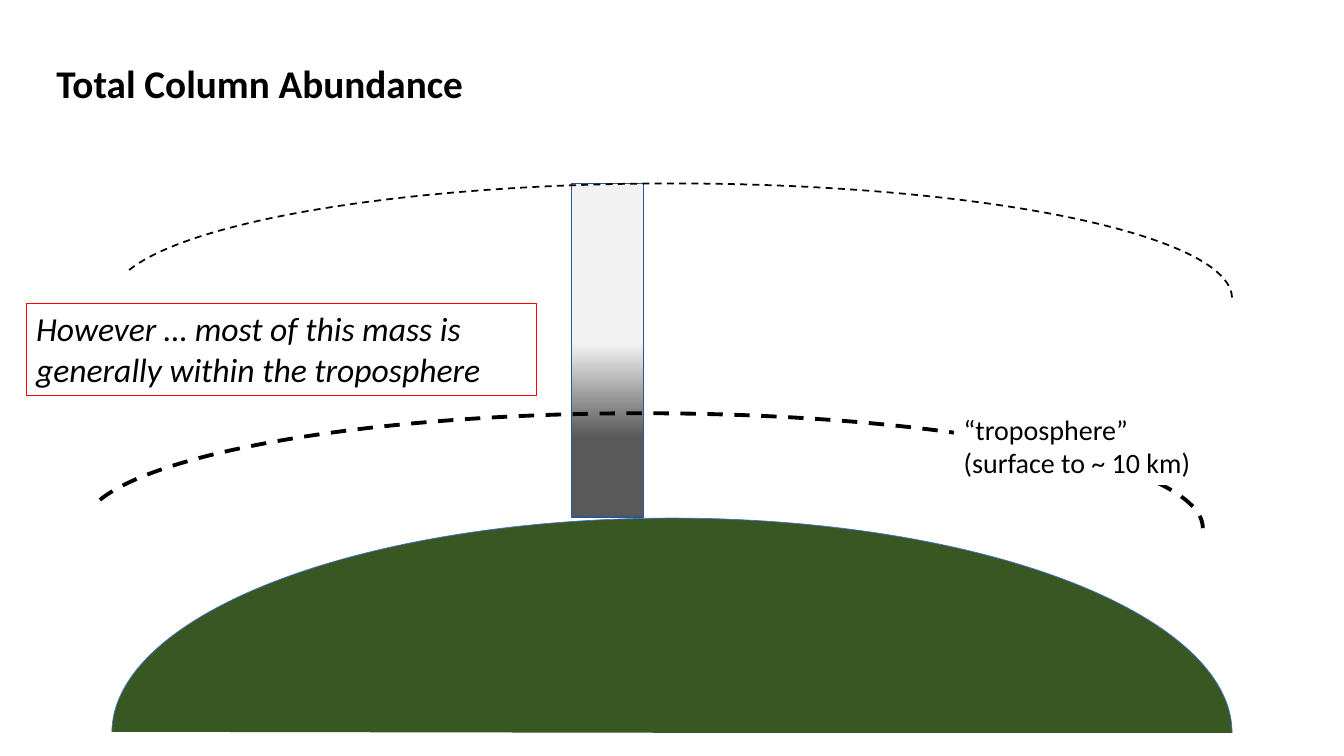
from dataclasses import dataclass

from pptx import Presentation
from pptx.dml.color import RGBColor
from pptx.enum.dml import MSO_LINE
from pptx.enum.shapes import MSO_SHAPE as Preset
from pptx.enum.text import MSO_ANCHOR, MSO_AUTO_SIZE, PP_ALIGN
from pptx.shapes.autoshape import Shape
from pptx.slide import Slide
from pptx.util import Emu, Pt

PX = 9144  # 100 px to the inch
COLORS = {
    "text": "000000", "ground": "385723", "ground_line": "4472C4",
    "column_line": "325491", "dense": "595959", "thin": "F2F2F2",
    "label": "FFFFFF", "callout": "FF0000", "boundary": "000000",
}


@dataclass(frozen=True)
class Box:
    left: int
    top: int
    width: int
    height: int

    def emu(self) -> list[Emu]:
        return [Emu(n * PX) for n in (self.left, self.top, self.width, self.height)]


@dataclass(frozen=True)
class Arc:
    box: Box
    start: float
    line: str
    weight: float
    fill: str | None = None
    dashed: bool = True


GROUND = Arc(Box(111, 514, 1111, 426), 108.06, "ground_line", 0.5, "ground", False)
BOUNDARIES = [
    Arc(Box(111, 182, 1111, 228), 109.79, "boundary", 1.25),
    Arc(Box(82, 410, 1111, 228), 109.79, "boundary", 2.75),
]


def rgb(name: str) -> RGBColor:
    return RGBColor.from_string(COLORS[name])


def add_preset(slide: Slide, preset: Preset, box: Box, *, fill: str | None = None,
               line: str | None = None, weight: float = 1) -> Shape:
    shape = slide.shapes.add_shape(preset, *box.emu())
    shape.shadow.inherit = False
    if fill:
        shape.fill.solid()
        shape.fill.fore_color.rgb = rgb(fill)
    else:
        shape.fill.background()
    if line:
        shape.line.color.rgb = rgb(line)
        shape.line.width = Pt(weight)
    else:
        shape.line.fill.background()
    return shape


def add_arc(slide: Slide, arc: Arc) -> None:
    shape = add_preset(slide, Preset.ARC, arc.box, fill=arc.fill,
                       line=arc.line, weight=arc.weight)
    shape.adjustments[0] = arc.start
    shape.adjustments[1] = 0
    if arc.dashed:
        shape.line.dash_style = MSO_LINE.DASH


def add_column(slide: Slide, box: Box) -> None:
    """Draw the air column, dense at the bottom and thin above."""
    column = add_preset(slide, Preset.RECTANGLE, box, line="column_line")
    column.fill.gradient()
    column.fill.gradient_angle = 90
    densities = [(0.24, "dense"), (0.52, "thin")]
    for stop, (position, color) in zip(column.fill.gradient_stops, densities):
        stop.position = position
        stop.color.rgb = rgb(color)


def write(shape: Shape, *lines: str, size: int, bold: bool = False,
          italic: bool = False, wrap: bool = False) -> None:
    frame = shape.text_frame
    frame.text = "\n".join(lines)
    frame.word_wrap = wrap
    frame.auto_size = MSO_AUTO_SIZE.SHAPE_TO_FIT_TEXT
    frame.vertical_anchor = MSO_ANCHOR.TOP
    for paragraph in frame.paragraphs:
        paragraph.alignment = PP_ALIGN.LEFT
        font = paragraph.runs[0].font
        font.name, font.size = "Calibri", Pt(size)
        font.bold, font.italic = bold, italic
        font.color.rgb = rgb("text")


def main() -> None:
    deck = Presentation()
    deck.slide_width, deck.slide_height = Emu(1333 * PX), Emu(750 * PX)
    slide = deck.slides.add_slide(deck.slide_layouts[5])

    title = slide.shapes.title
    title.left, title.top, title.width, title.height = Box(46, 54, 428, 57).emu()
    write(title, "Total Column Abundance", size=28, bold=True)

    add_arc(slide, GROUND)
    add_column(slide, Box(567, 182, 71, 331))
    for boundary in BOUNDARIES:
        add_arc(slide, boundary)

    troposphere = add_preset(slide, Preset.RECTANGLE, Box(946, 404, 247, 77), fill="label")
    write(troposphere, "“troposphere”", "(surface to ~ 10 km)", size=20)

    callout = add_preset(slide, Preset.RECTANGLE, Box(26, 301, 506, 91),
                         line="callout", weight=0.75)
    write(callout, "However … most of this mass is generally within the troposphere",
          size=24, italic=True, wrap=True)

    deck.save("out.pptx")


if __name__ == "__main__":
    main()
